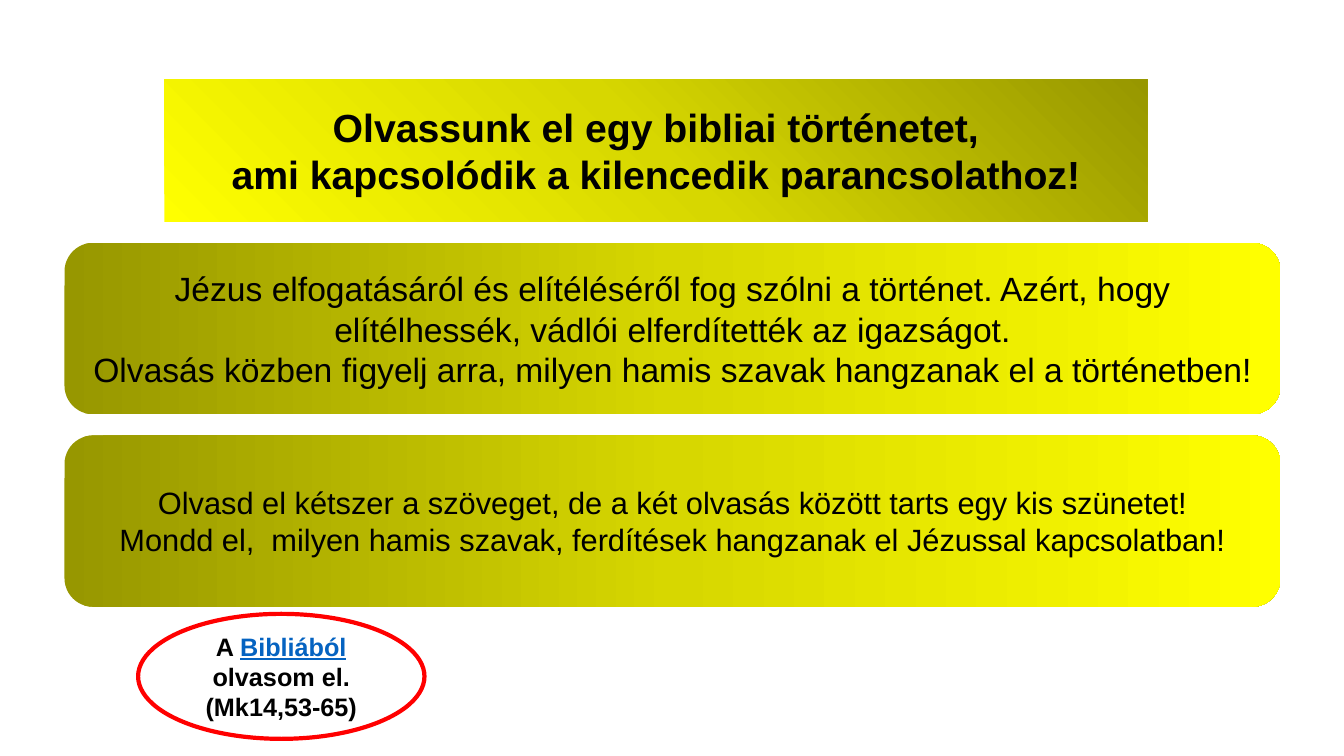
from lxml import etree
from pptx import Presentation
from pptx import util as u
from pptx.dml.color import RGBColor
from pptx.enum import shapes, text
from pptx.oxml import parse_xml
from pptx.oxml.ns import nsdecls, qn

BLACK = RGBColor(0x00, 0x00, 0x00)
WHITE = RGBColor(0xFF, 0xFF, 0xFF)
RED = RGBColor(0xFF, 0x00, 0x00)
LINK_BLUE = RGBColor(0x05, 0x63, 0xC1)
OLIVE = RGBColor(0x97, 0x97, 0x00)
MUSTARD = RGBColor(0xD7, 0xD7, 0x00)
YELLOW = RGBColor(0xFF, 0xFF, 0x00)

EMU_PER_PX = 9144
PANEL_LEFT, PANEL_WIDTH, PANEL_HEIGHT = 64, 1206, 170
PANEL_TOP, PANEL_STEP = 241, 191
LINEAR = '<a:lin ang="0" scaled="1"/>'
CIRCULAR = '<a:path path="circle"><a:fillToRect l="100000" b="100000"/></a:path>'


class ReadingSlide:
    """Style and drawing methods for the Bible reading slide."""

    def __init__(self, deck, font="Arial"):
        self.font = font
        self.page = deck.slides.add_slide(deck.slide_layouts[5])

    def px(self, *lengths):
        return [u.Emu(length * EMU_PER_PX) for length in lengths]

    def gradient(self, shape, direction):
        shape.fill.gradient()
        fill = shape._element.spPr.find(qn("a:gradFill"))
        stops = "".join(
            f'<a:gs pos="{position}"><a:srgbClr val="{color}"/></a:gs>'
            for position, color in ((0, OLIVE), (50000, MUSTARD), (100000, YELLOW))
        )
        fill[:] = parse_xml(
            f'<a:gradFill {nsdecls("a")}><a:gsLst>{stops}</a:gsLst>{direction}</a:gradFill>'
        )[:]
        shape.line.fill.background()

    def wording(self, shape, paragraphs, size, bold=False):
        frame = shape.text_frame
        frame.word_wrap = True
        frame.auto_size = text.MSO_AUTO_SIZE.NONE
        frame.vertical_anchor = text.MSO_ANCHOR.MIDDLE
        for index, pieces in enumerate(paragraphs):
            para = frame.add_paragraph() if index else frame.paragraphs[0]
            para.alignment = text.PP_ALIGN.CENTER
            if isinstance(pieces, str):
                para.text = pieces
            else:
                for piece in pieces:
                    para.add_run().text = piece
            for span in para.runs:
                span.font.name = self.font
                span.font.size = u.Pt(size)
                span.font.bold = bold
                span.font.color.rgb = BLACK

    def title(self, box, heading, size):
        shape = self.page.shapes.title
        shape.left, shape.top, shape.width, shape.height = self.px(*box)
        outline = etree.SubElement(shape._element.spPr, qn("a:prstGeom"), prst="roundRect")
        etree.SubElement(outline, qn("a:avLst"))
        self.gradient(shape, CIRCULAR)
        self.wording(shape, [heading], size, bold=True)

    def shape(self, kind, box):
        shape = self.page.shapes.add_shape(kind, *self.px(*box))
        shape.shadow.inherit = False
        return shape

    def panel(self, box, paragraphs, size):
        shape = self.shape(shapes.MSO_SHAPE.ROUNDED_RECTANGLE, box)
        self.gradient(shape, LINEAR)
        self.wording(shape, paragraphs, size)

    def oval(self, box, paragraphs, size):
        shape = self.shape(shapes.MSO_SHAPE.OVAL, box)
        shape.fill.solid()
        shape.fill.fore_color.rgb = WHITE
        shape.line.color.rgb = RED
        shape.line.width = u.Pt(3)
        self.wording(shape, paragraphs, size, bold=True)
        return shape

    def mark_link(self, span):
        span.font.color.rgb = LINK_BLUE
        span.font.underline = True


def main():
    deck = Presentation()
    deck.slide_width, deck.slide_height = u.Inches(13.33), u.Inches(7.5)
    slide = ReadingSlide(deck)

    slide.title(
        (163, 79, 975, 141),
        "Olvassunk el egy bibliai történetet,\nami kapcsolódik a kilencedik parancsolathoz!",
        28,
    )
    passage = slide.oval(
        (137, 609, 284, 124),
        [("A ", "Bibliából", " olvasom el."), "(Mk14,53-65)"],
        18,
    )
    slide.mark_link(passage.text_frame.paragraphs[0].runs[1])

    panels = (
        (
            [
                "Jézus elfogatásáról és elítéléséről fog szólni a történet. "
                "Azért, hogy elítélhessék, vádlói elferdítették az igazságot.",
                "Olvasás közben figyelj arra, milyen hamis szavak hangzanak el a történetben!",
            ],
            24,
        ),
        (
            [
                "Olvasd el kétszer a szöveget, de a két olvasás között tarts egy kis szünetet!\n"
                "Mondd el,  milyen hamis szavak, ferdítések hangzanak el Jézussal kapcsolatban!",
            ],
            22,
        ),
    )
    for row, (paragraphs, size) in enumerate(panels):
        top = PANEL_TOP + row * PANEL_STEP
        slide.panel((PANEL_LEFT, top, PANEL_WIDTH, PANEL_HEIGHT), paragraphs, size)

    deck.save("out.pptx")


if __name__ == "__main__":
    main()
